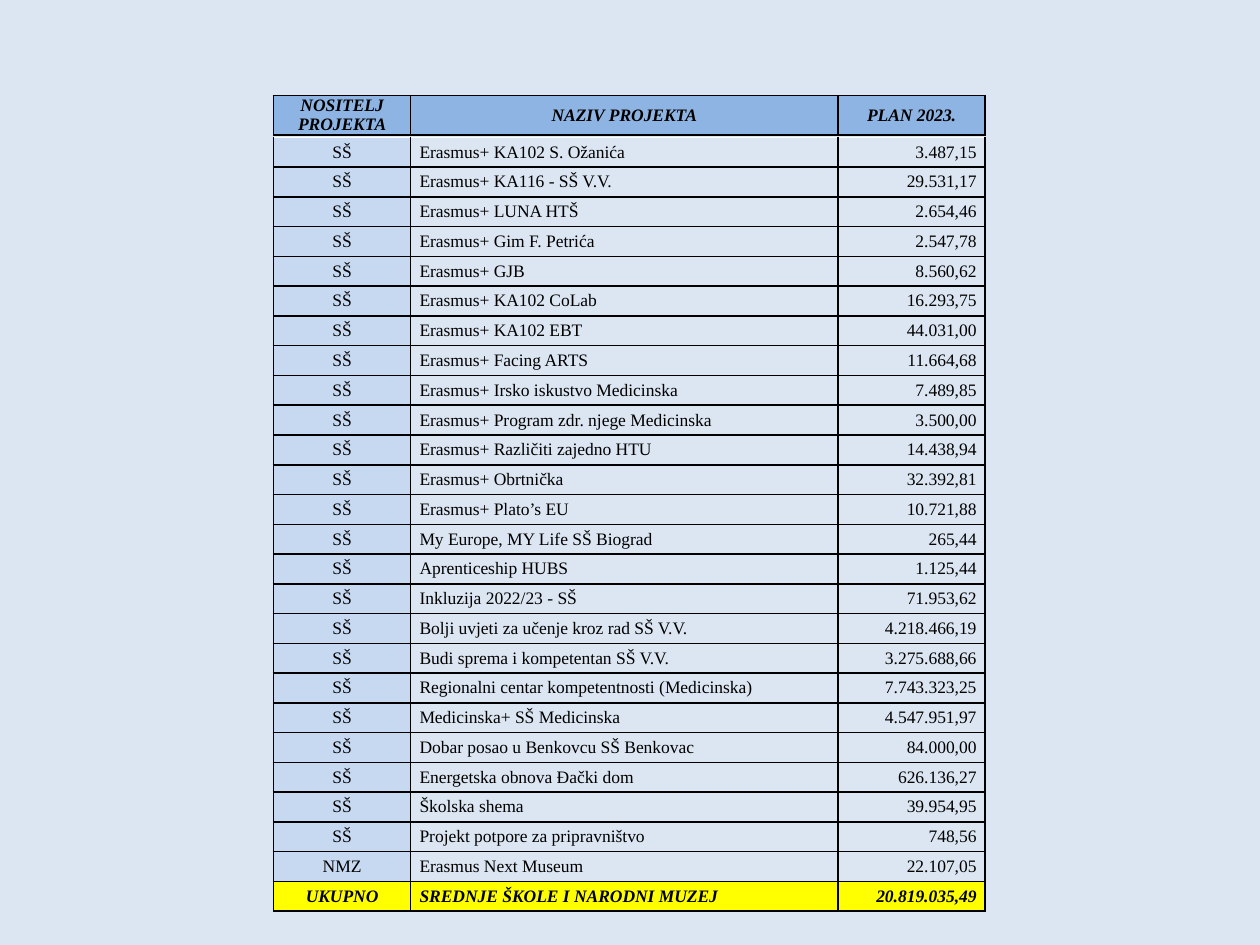
from dataclasses import dataclass

from lxml.etree import SubElement
from pptx import Presentation
from pptx.dml.color import RGBColor
from pptx.enum.text import MSO_ANCHOR as Anchor, PP_ALIGN as Align
from pptx.oxml.ns import qn
from pptx.util import Inches, Pt


@dataclass(frozen=True)
class Theme:
    background: str = "DCE6F2"
    header: str = "8EB4E3"
    holder: str = "C6D9F1"
    total: str = "FFFF00"
    ink: str = "000000"
    font: str = "Times New Roman"
    size: int = 10
    border: int = 1


THEME = Theme()
LEFT = 2.17
COLUMNS = (1.09, 3.39, 1.17)
HEADER = ("NOSITELJ PROJEKTA", "NAZIV PROJEKTA", "PLAN 2023.")
SCHOOL_PROJECTS = [
    ("Erasmus+ KA102 S. Ožanića", "3.487,15"),
    ("Erasmus+ KA116 - SŠ V.V.", "29.531,17"),
    ("Erasmus+ LUNA HTŠ", "2.654,46"),
    ("Erasmus+ Gim F. Petrića", "2.547,78"),
    ("Erasmus+ GJB", "8.560,62"),
    ("Erasmus+ KA102 CoLab", "16.293,75"),
    ("Erasmus+ KA102 EBT", "44.031,00"),
    ("Erasmus+ Facing ARTS", "11.664,68"),
    ("Erasmus+ Irsko iskustvo Medicinska", "7.489,85"),
    ("Erasmus+ Program zdr. njege Medicinska", "3.500,00"),
    ("Erasmus+ Različiti zajedno HTU", "14.438,94"),
    ("Erasmus+ Obrtnička", "32.392,81"),
    ("Erasmus+ Plato’s EU", "10.721,88"),
    ("My Europe, MY Life SŠ Biograd", "265,44"),
    ("Aprenticeship HUBS", "1.125,44"),
    ("Inkluzija 2022/23 - SŠ", "71.953,62"),
    ("Bolji uvjeti za učenje kroz rad SŠ V.V.", "4.218.466,19"),
    ("Budi sprema i kompetentan SŠ V.V.", "3.275.688,66"),
    ("Regionalni centar kompetentnosti (Medicinska)", "7.743.323,25"),
    ("Medicinska+ SŠ Medicinska", "4.547.951,97"),
    ("Dobar posao u Benkovcu SŠ Benkovac", "84.000,00"),
    ("Energetska obnova Đački dom", "626.136,27"),
    ("Školska shema", "39.954,95"),
    ("Projekt potpore za pripravništvo", "748,56"),
]
MUSEUM_PROJECT = ("NMZ", "Erasmus Next Museum", "22.107,05")
TOTAL = ("UKUPNO", "SREDNJE ŠKOLE I NARODNI MUZEJ", "20.819.035,49")
BODY_ALIGNS = (Align.CENTER, Align.LEFT, Align.RIGHT)


def set_attributes(target, values):
    for name, value in values.items():
        setattr(target, name, value)


def paint(fill, color):
    if color is None:
        fill.background()
    else:
        fill.solid()
        fill.fore_color.rgb = RGBColor.from_string(color)


def draw_borders(cell, sides):
    properties = cell._tc.get_or_add_tcPr()
    for position, side in enumerate(sides):
        line = properties.makeelement(qn(f"a:ln{side}"), {"w": str(Pt(THEME.border))})
        solid = SubElement(line, qn("a:solidFill"))
        SubElement(solid, qn("a:srgbClr"), val=THEME.ink)
        properties.insert(position, line)


def write_cell(cell, text, align, color, strong, sides):
    set_attributes(cell, {
        "vertical_anchor": Anchor.MIDDLE,
        "margin_left": Inches(0.07), "margin_right": Inches(0.07),
        "margin_top": 0, "margin_bottom": 0,
    })
    para = cell.text_frame.paragraphs[0]
    para.alignment = align
    span = para.add_run()
    span.text = text
    set_attributes(span.font, {
        "name": THEME.font, "size": Pt(THEME.size), "bold": strong, "italic": strong,
    })
    span.font.color.rgb = RGBColor.from_string(THEME.ink)
    paint(cell.fill, color)
    draw_borders(cell, sides)


def add_grid(page, top, height, rows, aligns, style_of, open_top=False):
    frame = page.shapes.add_table(
        len(rows), len(COLUMNS), Inches(LEFT), Inches(top),
        Inches(sum(COLUMNS)), Inches(height))
    table = frame.table
    set_attributes(table, {"first_row": False, "horz_banding": False})
    for column, width in zip(table.columns, COLUMNS):
        column.width = Inches(width)
    for index, texts in enumerate(rows):
        table.rows[index].height = Inches(height / len(rows))
        colors, strong = style_of(texts)
        sides = "LRB" if open_top and index == 0 else "LRTB"
        for number, (text, align, color) in enumerate(zip(texts, aligns, colors)):
            write_cell(table.cell(index, number), text, align, color, strong, sides)


def header_style(texts):
    return (THEME.header,) * len(texts), True


def body_style(texts):
    if texts == TOTAL:
        return (THEME.total,) * len(texts), True
    return (THEME.holder, None, None), False


def main():
    deck = Presentation()
    set_attributes(deck, {"slide_width": Inches(10), "slide_height": Inches(7.5)})
    page = deck.slides.add_slide(deck.slide_layouts[6])
    paint(page.background.fill, THEME.background)
    body = [("SŠ", *project) for project in SCHOOL_PROJECTS] + [MUSEUM_PROJECT, TOTAL]
    add_grid(page, 0.76, 0.31, [HEADER], (Align.CENTER,) * 3, header_style)
    add_grid(page, 1.09, 6.15, body, BODY_ALIGNS, body_style, open_top=True)
    deck.save("out.pptx")


if __name__ == "__main__":
    main()
